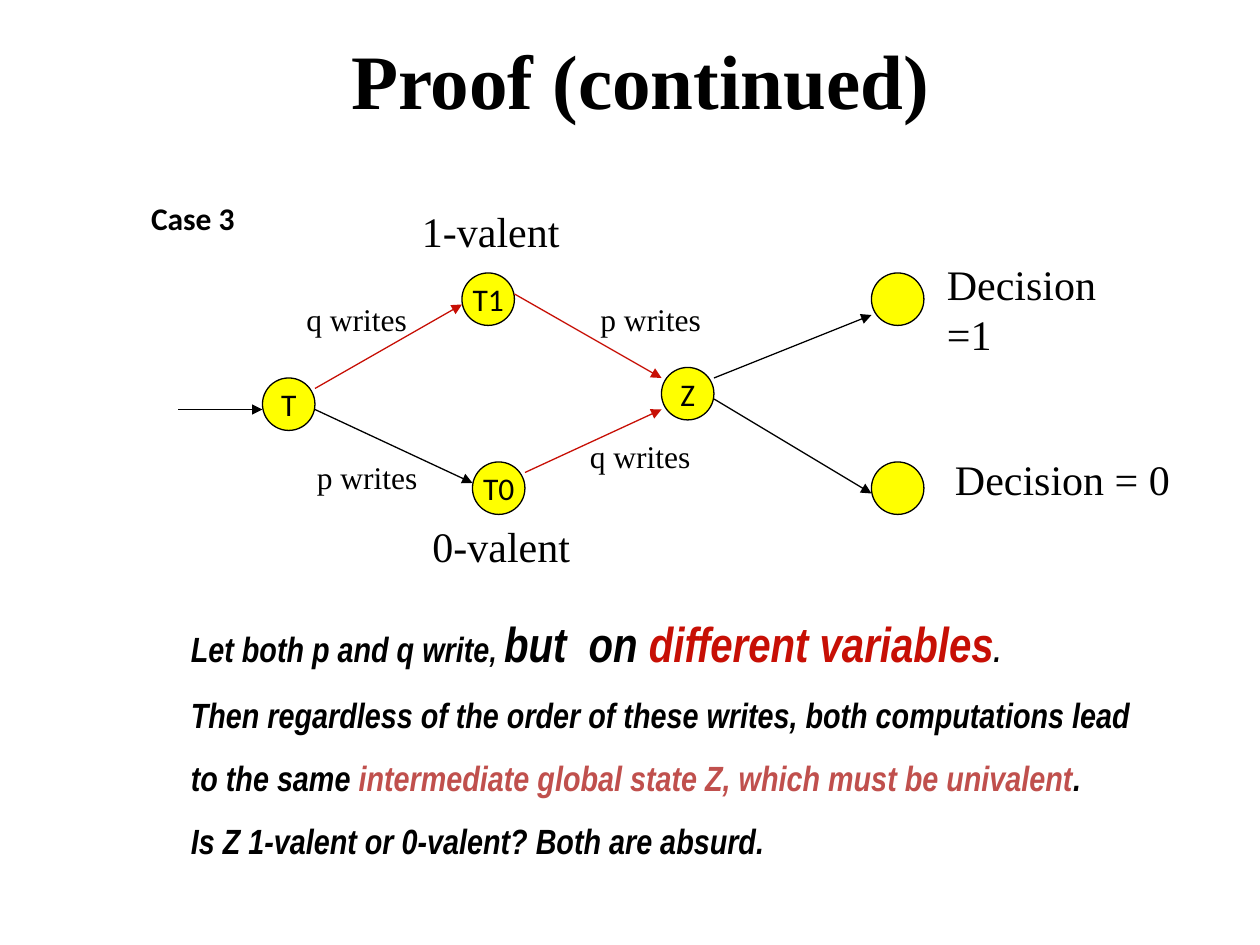
from lxml import etree
from pptx import Presentation
from pptx import util as u
from pptx.dml.color import RGBColor
from pptx.enum import shapes, text
from pptx.oxml.ns import qn

COLOURS = {"black": "000000", "red": "C70F05", "rose": "C0504D",
           "yellow": "FFFF00"}
SERIF, SANS, NARROW = "Times New Roman", "Calibri", "Arial Narrow"
NODE_SIZE = 30


def rgb(name):
    return RGBColor.from_string(COLOURS[name])


class SlideBuilder:
    """Holds the style and the current slide; all lengths are in points."""

    line_width = 0.75

    def __init__(self, slide):
        self.slide = slide

    def add_run(self, paragraph, words, size, font=SERIF, colour="black",
                bold=False, italic=False):
        run = paragraph.add_run()
        run.text = words
        run.font.name = font
        run.font.size = u.Pt(size)
        run.font.bold = bold
        run.font.italic = italic
        run.font.color.rgb = rgb(colour)

    def text_box(self, left, top, width, height):
        box = self.slide.shapes.add_textbox(*map(u.Pt, (left, top, width, height)))
        frame = box.text_frame
        frame.word_wrap = False
        frame.auto_size = text.MSO_AUTO_SIZE.SHAPE_TO_FIT_TEXT
        return frame

    def title(self, words, left, top, width, height):
        frame = self.text_box(left, top, width, height)
        frame.word_wrap = True
        frame.auto_size = text.MSO_AUTO_SIZE.NONE
        frame.vertical_anchor = text.MSO_ANCHOR.MIDDLE
        paragraph = frame.paragraphs[0]
        paragraph.alignment = text.PP_ALIGN.CENTER
        self.add_run(paragraph, words, 44, bold=True)

    def label(self, words, left, top, width, height, size, **style):
        frame = self.text_box(left, top, width, height)
        self.add_run(frame.paragraphs[0], words, size, **style)

    def body(self, lines, left, top, width, height):
        frame = self.text_box(left, top, width, height)
        for index, runs in enumerate(lines):
            paragraph = frame.add_paragraph() if index else frame.paragraphs[0]
            paragraph.line_spacing = 1.5
            for words, size, colour in runs:
                self.add_run(paragraph, words, size, NARROW, colour,
                             bold=True, italic=True)

    def node(self, name, left, top):
        shape = self.slide.shapes.add_shape(
            shapes.MSO_SHAPE.OVAL, u.Pt(left), u.Pt(top),
            u.Pt(NODE_SIZE), u.Pt(NODE_SIZE))
        shape.shadow.inherit = False
        shape.fill.solid()
        shape.fill.fore_color.rgb = rgb("yellow")
        shape.line.color.rgb = rgb("black")
        shape.line.width = u.Pt(self.line_width)
        if name:
            frame = shape.text_frame
            frame.word_wrap = False
            frame.vertical_anchor = text.MSO_ANCHOR.MIDDLE
            paragraph = frame.paragraphs[0]
            paragraph.alignment = text.PP_ALIGN.CENTER
            self.add_run(paragraph, name, 18, SANS)

    def arrow(self, start, end, colour):
        connector = self.slide.shapes.add_connector(
            shapes.MSO_CONNECTOR.STRAIGHT, *map(u.Pt, (*start, *end)))
        connector.line.color.rgb = rgb(colour)
        connector.line.width = u.Pt(self.line_width)
        etree.SubElement(connector.line._get_or_add_ln(), qn("a:tailEnd"),
                         type="triangle")
        etree.SubElement(connector._element.spPr, qn("a:effectLst"))


def main():
    presentation = Presentation()
    presentation.slide_width = u.Pt(720)
    presentation.slide_height = u.Pt(540)
    builder = SlideBuilder(
        presentation.slides.add_slide(presentation.slide_layouts[6]))

    # Headings
    builder.title("Proof (continued)", 60, 0, 612, 90)
    builder.label("Case 3", 79.2, 110.2, 82, 36, 18, font=SANS, bold=True)

    # States, the two unnamed ones being the decisions
    for name, left, top in (("T", 150, 216), ("T0", 270, 264),
                            ("T1", 264, 156), ("Z", 378, 210),
                            ("", 498, 156), ("", 498, 264)):
        builder.node(name, left, top)

    # Transitions
    for start, end, colour in (
            ((102, 234), (150, 234), "black"),
            ((180, 222), (264, 174), "red"),
            ((180, 234), (270, 276), "black"),
            ((294, 168), (378, 216), "red"),
            ((300, 270), (378, 234), "red"),
            ((408, 216), (498, 180), "black"),
            ((408, 228), (498, 282), "black")):
        builder.arrow(start, end, colour)

    # Transition labels
    for words, left, top in (("q writes", 168, 168), ("p writes", 174, 258),
                             ("p writes", 336, 168), ("q writes", 330, 246)):
        builder.label(words, left, top, 72, 29, 18)

    # Valence and decision labels
    for words, left, top, width in (
            ("1-valent", 234, 114, 93), ("0-valent", 240, 294, 93),
            ("Decision =1", 534, 144, 131), ("Decision = 0", 538.6, 255.4, 137.5)):
        builder.label(words, left, top, width, 36, 24)

    # Argument
    builder.body((
        (("Let both p and q write", 20, "black"), (", ", 18, "black"),
         ("but  on ", 28, "black"), ("different variables", 28, "red"),
         (".", 18, "black")),
        (("Then regardless of the order of these writes, "
          "both computations lead", 20, "black"),),
        (("to the same ", 20, "black"),
         ("intermediate global state Z, which must be univalent", 20, "rose"),
         (".", 20, "black")),
        (("Is Z 1-valent or 0-valent? Both are absurd.", 20, "black"),),
    ), 102, 330.5, 560, 201.5)

    presentation.save("out.pptx")


if __name__ == "__main__":
    main()
